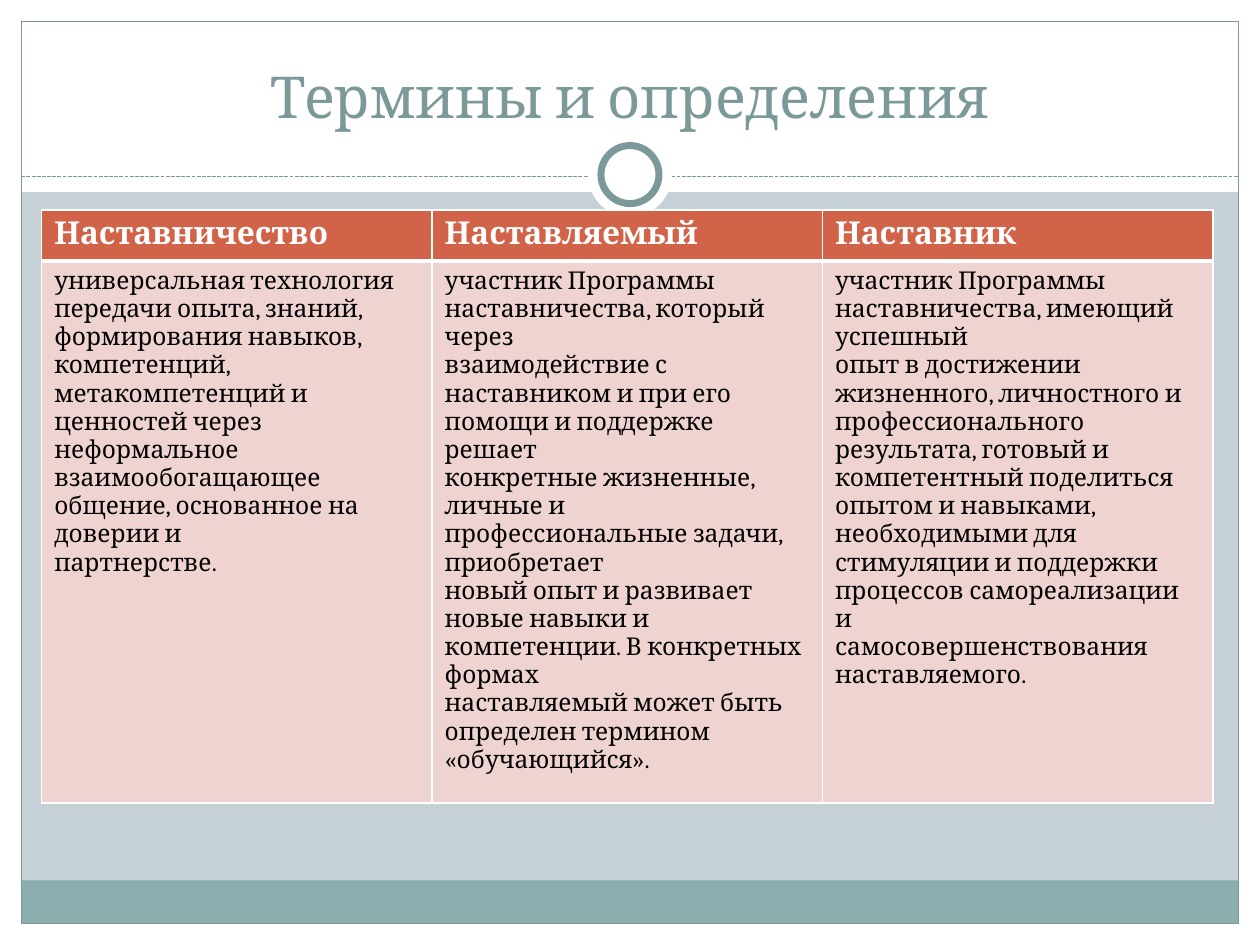
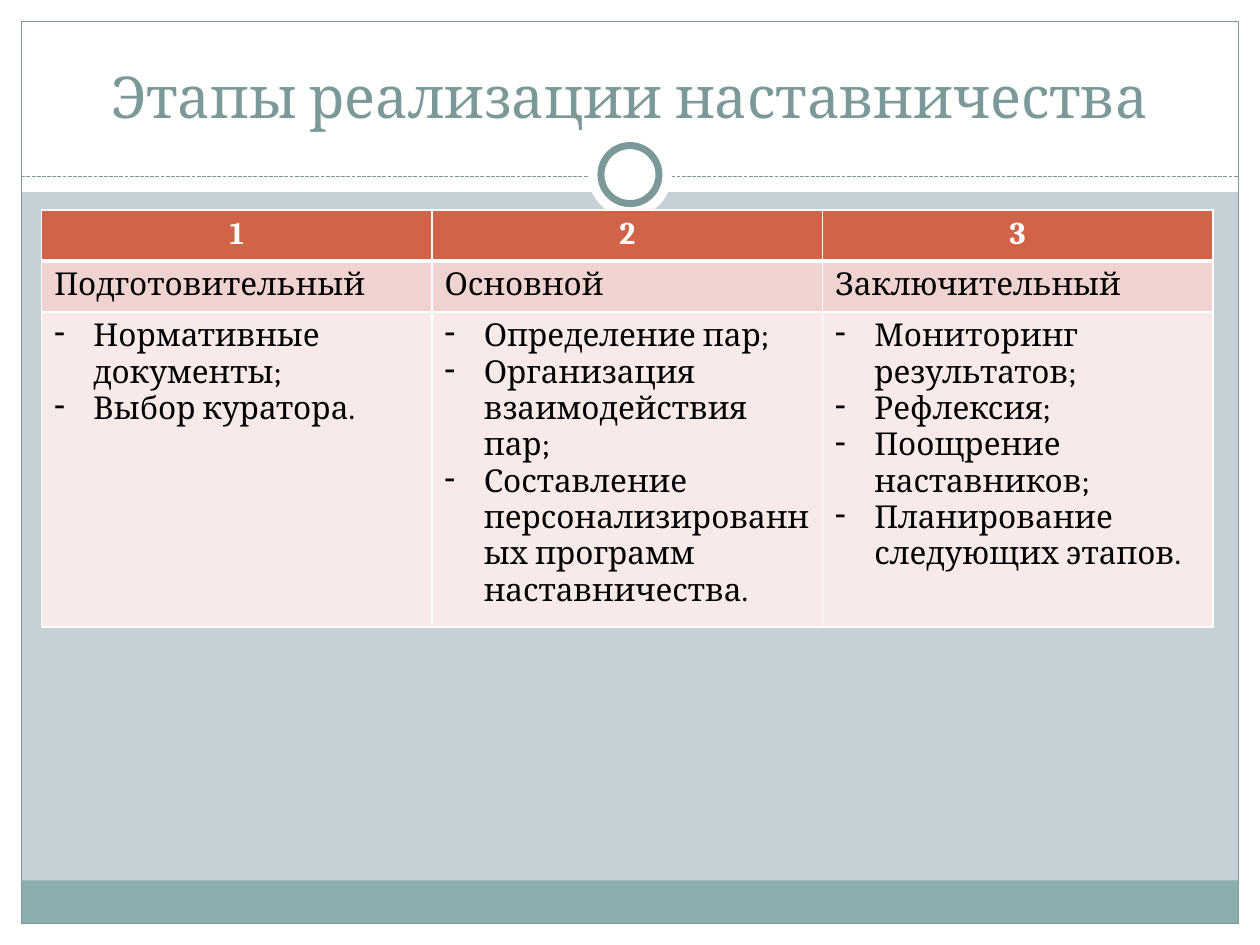
from lxml.etree import SubElement
from pptx import Presentation
from pptx.dml.color import RGBColor
from pptx.enum.dml import MSO_LINE
from pptx.enum.shapes import MSO_CONNECTOR, MSO_SHAPE
from pptx.enum.text import MSO_ANCHOR, PP_ALIGN
from pptx.oxml.ns import qn
from pptx.util import Cm, Pt

WHITE = RGBColor(0xFF, 0xFF, 0xFF)
BLACK = RGBColor(0x00, 0x00, 0x00)
BACKDROP = RGBColor(0xC5, 0xD1, 0xD7)
TEAL = RGBColor(0x7C, 0x99, 0x9A)
BAND = RGBColor(0x8C, 0xAD, 0xAE)
HEADER = RGBColor(0xD1, 0x63, 0x49)
ROW_FILLS = (HEADER, RGBColor(0xEE, 0xD3, 0xD0), RGBColor(0xF7, 0xEA, 0xE9))

WIDTH, HEIGHT = 25.4, 19.05
MARGIN = 0.43
RIGHT = WIDTH - MARGIN
BOTTOM = HEIGHT - MARGIN
RULE_TOP = 3.56
RING_MIDDLE = 3.52

TERMS = [
    ["Наставничество", "Наставляемый", "Наставник"],
    [
        ["универсальная технология передачи опыта, знаний,",
         "формирования навыков, компетенций, метакомпетенций и ценностей через",
         "неформальное взаимообогащающее общение, основанное на доверии и",
         "партнерстве."],
        ["участник Программы наставничества, который через",
         "взаимодействие с наставником и при его помощи и поддержке решает",
         "конкретные жизненные, личные и профессиональные задачи, приобретает",
         "новый опыт и развивает новые навыки и компетенции. В конкретных формах",
         "наставляемый может быть определен термином «обучающийся»."],
        ["участник Программы наставничества, имеющий успешный",
         "опыт в достижении жизненного, личностного и профессионального",
         "результата, готовый и компетентный поделиться опытом и навыками,",
         "необходимыми для стимуляции и поддержки процессов самореализации и",
         "самосовершенствования наставляемого."],
    ],
]
STAGES = [
    ["1", "2", "3"],
    ["Подготовительный", "Основной", "Заключительный"],
    [
        ["Нормативные документы;", "Выбор куратора."],
        ["Определение пар;", "Организация взаимодействия пар;",
         "Составление персонализированных программ наставничества."],
        ["Мониторинг результатов;", "Рефлексия;", "Поощрение наставников;",
         "Планирование следующих этапов."],
    ],
]


class SlideBuilder:
    """Holds the deck's style and the page being drawn; lengths are in cm."""

    font = "Cambria"

    def __init__(self):
        self.deck = Presentation()
        self.deck.slide_width = Cm(WIDTH)
        self.deck.slide_height = Cm(HEIGHT)
        self.page = None

    def start_page(self, title):
        self.page = self.deck.slides.add_slide(self.deck.slide_layouts[6])
        fill = self.page.background.fill
        fill.solid()
        fill.fore_color.rgb = BACKDROP
        self.frame()
        self.title(title)

    def frame(self):
        for left, top, width, height in (
            (0, BOTTOM, WIDTH, MARGIN),
            (0, 0, WIDTH, 3.87),
            (0, 0, MARGIN, HEIGHT),
            (RIGHT, 0, MARGIN, HEIGHT),
        ):
            self.shape(MSO_SHAPE.RECTANGLE, left, top, width, height, WHITE)
        inner_width = RIGHT - MARGIN
        self.shape(MSO_SHAPE.RECTANGLE, MARGIN, 17.75, inner_width, 0.87, BAND)
        self.shape(MSO_SHAPE.RECTANGLE, MARGIN, MARGIN, inner_width,
                   BOTTOM - MARGIN, line=TEAL, weight=0.75)
        self.dashed_rule(MARGIN, RIGHT, RULE_TOP)
        self.circle(1.7)
        self.circle(1.17, line=TEAL, weight=4)

    def shape(self, kind, left, top, width, height, fill=None, line=None, weight=0):
        shape = self.page.shapes.add_shape(
            kind, Cm(left), Cm(top), Cm(width), Cm(height))
        shape.shadow.inherit = False
        for target, colour in ((shape.fill, fill), (shape.line.fill, line)):
            if colour is None:
                target.background()
            else:
                target.solid()
                target.fore_color.rgb = colour
        if line is not None:
            shape.line.width = Pt(weight)

    def circle(self, size, **outline):
        self.shape(MSO_SHAPE.OVAL, (WIDTH - size) / 2, RING_MIDDLE - size / 2,
                   size, size, WHITE, **outline)

    def dashed_rule(self, start, end, top):
        rule = self.page.shapes.add_connector(
            MSO_CONNECTOR.STRAIGHT, Cm(start), Cm(top), Cm(end), Cm(top))
        rule.line.color.rgb = TEAL
        rule.line.width = Pt(0.75)
        rule.line.dash_style = MSO_LINE.SQUARE_DOT
        SubElement(rule._element.spPr, qn("a:effectLst"))

    def title(self, text):
        box = self.page.shapes.add_textbox(Cm(0.85), Cm(0.64), Cm(23.7), Cm(2.1))
        box.text_frame.word_wrap = True
        box.text_frame.vertical_anchor = MSO_ANCHOR.BOTTOM
        self.add_lines(box.text_frame, [text], PP_ALIGN.CENTER, TEAL, size=Pt(33))

    def add_lines(self, text_frame, lines, align=PP_ALIGN.LEFT, colour=BLACK,
                  bulleted=False, **formats):
        for index, line in enumerate(lines):
            para = text_frame.add_paragraph() if index else text_frame.paragraphs[0]
            para.alignment = align
            if bulleted:
                self.add_dash(para)
            span = para.add_run()
            span.text = line
            span.font.color.rgb = colour
            for name, value in {"name": self.font, **formats}.items():
                setattr(span.font, name, value)

    def add_dash(self, para):
        properties = para._p.get_or_add_pPr()
        indent = Cm(0.79)
        properties.set("marL", str(indent))
        properties.set("indent", str(-indent))
        SubElement(properties, qn("a:buChar"), char="-")

    def borders(self, cell, **weights):
        """Draw white cell edges, given as L, R, T and B weights in points."""
        properties = cell._tc.get_or_add_tcPr()
        for side, weight in weights.items():
            edge = SubElement(properties, qn(f"a:ln{side}"), w=str(Pt(weight)))
            fill = SubElement(edge, qn("a:solidFill"))
            SubElement(fill, qn("a:srgbClr"), val=str(WHITE))

    def table(self, rows, header_align, body_size, bulleted_row=None):
        column_width, row_height = 7.87, 1.03
        columns = len(rows[0])
        table = self.page.shapes.add_table(
            len(rows), columns, Cm(0.84), Cm(4.23),
            Cm(column_width * columns), Cm(row_height * len(rows))).table
        header = {"align": header_align, "colour": WHITE,
                  "size": Pt(18), "bold": True}
        body = {"size": Pt(body_size), "bold": False}
        for row, texts in enumerate(rows):
            for column, text in enumerate(texts):
                cell = table.cell(row, column)
                self.borders(cell, L=1, R=1, T=3 if row == 1 else 1,
                             B=3 if row == 0 else 1)
                cell.fill.solid()
                cell.fill.fore_color.rgb = ROW_FILLS[row]
                lines = [text] if isinstance(text, str) else text
                self.add_lines(cell.text_frame, lines, bulleted=row == bulleted_row,
                               **(body if row else header))


def main():
    builder = SlideBuilder()
    builder.start_page("Термины и определения")
    builder.table(TERMS, PP_ALIGN.LEFT, body_size=14)
    builder.start_page("Этапы реализации наставничества")
    builder.table(STAGES, PP_ALIGN.CENTER, body_size=18, bulleted_row=2)
    builder.deck.save("out.pptx")


if __name__ == "__main__":
    main()
